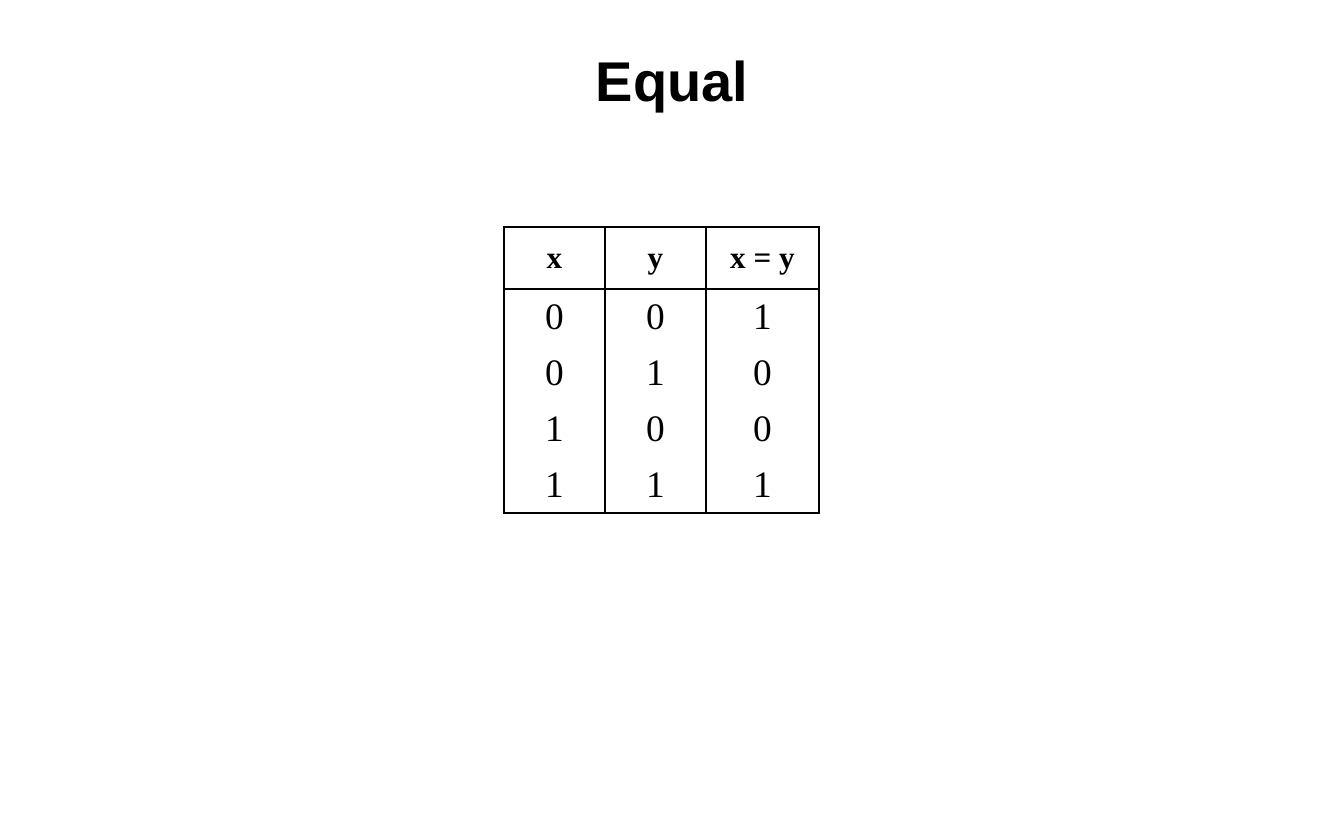
from dataclasses import dataclass

from lxml import etree
from pptx import Presentation
from pptx.dml.color import RGBColor
from pptx.enum.text import MSO_ANCHOR, PP_ALIGN
from pptx.oxml.ns import qn
from pptx.util import Emu, Pt

CENTER = PP_ALIGN.CENTER
MIDDLE = MSO_ANCHOR.MIDDLE
PX_PER_INCH = 112
TITLE_ONLY = 5


@dataclass(frozen=True)
class Theme:
    ink: str = "000000"
    title_font: str = "Arial"
    table_font: str = "Times New Roman"
    title_size: int = 36
    border_width: int = 1


@dataclass(frozen=True)
class RowStyle:
    size: int
    bold: bool
    space_before: int


THEME = Theme()
HEADER = RowStyle(size=20, bold=True, space_before=6)
BODY = RowStyle(size=24, bold=False, space_before=12)

COLUMN_WIDTHS = (101, 101, 113)
HEADER_HEIGHT, BODY_HEIGHT = 62, 56
TRUTH_TABLE = [("x", "y", "x = y")] + [
    (str(x), str(y), str(int(x == y))) for x in (0, 1) for y in (0, 1)
]


def px(length: int) -> Emu:
    return Emu(round(length * 914400 / PX_PER_INCH))


def add_span(para, text: str, font: str, size: int, bold: bool) -> None:
    span = para.add_run()
    span.text = text
    span.font.name = font
    span.font.size = Pt(size)
    span.font.bold = bold
    span.font.color.rgb = RGBColor.from_string(THEME.ink)


def set_borders(cell, visible: str) -> None:
    """Draw the sides named in visible and clear the others."""
    properties = cell._tc.get_or_add_tcPr()
    for index, side in enumerate("LRTB"):
        line = etree.Element(qn(f"a:ln{side}"), w=str(Pt(THEME.border_width)))
        if side in visible:
            fill = etree.SubElement(line, qn("a:solidFill"))
            etree.SubElement(fill, qn("a:srgbClr"), val=THEME.ink)
        else:
            etree.SubElement(line, qn("a:noFill"))
        properties.insert(index, line)


def fill_cell(cell, text: str, style: RowStyle, borders: str) -> None:
    cell.fill.background()
    cell.vertical_anchor = MIDDLE
    para = cell.text_frame.paragraphs[0]
    para.alignment = CENTER
    para.space_before = Pt(style.space_before)
    add_span(para, text, THEME.table_font, style.size, style.bold)
    set_borders(cell, borders)


def add_title(page, text: str) -> None:
    box = page.shapes.title
    box.left, box.top, box.width, box.height = px(0), px(37), px(1344), px(84)
    box.text_frame.vertical_anchor = MIDDLE
    para = box.text_frame.paragraphs[0]
    para.alignment = CENTER
    add_span(para, text, THEME.title_font, THEME.title_size, True)


def add_truth_table(page, left: int, top: int) -> None:
    last = len(TRUTH_TABLE) - 1
    height = HEADER_HEIGHT + last * BODY_HEIGHT
    table = page.shapes.add_table(
        len(TRUTH_TABLE), len(COLUMN_WIDTHS),
        px(left), px(top), px(sum(COLUMN_WIDTHS)), px(height),
    ).table
    table.first_row = table.horz_banding = False
    for column, width in zip(table.columns, COLUMN_WIDTHS):
        column.width = px(width)

    # Rules surround the header and the body; body rows are not separated
    for index, values in enumerate(TRUTH_TABLE):
        table.rows[index].height = px(BODY_HEIGHT if index else HEADER_HEIGHT)
        borders = "LR" + ("T" if index <= 1 else "") + ("B" if index in (0, last) else "")
        for column, text in enumerate(values):
            fill_cell(table.cell(index, column), text, BODY if index else HEADER, borders)


def main() -> None:
    deck = Presentation()
    deck.slide_width, deck.slide_height = px(1344), px(840)
    page = deck.slides.add_slide(deck.slide_layouts[TITLE_ONLY])
    add_title(page, "Equal")
    add_truth_table(page, left=504, top=227)
    deck.save("out.pptx")


if __name__ == "__main__":
    main()
